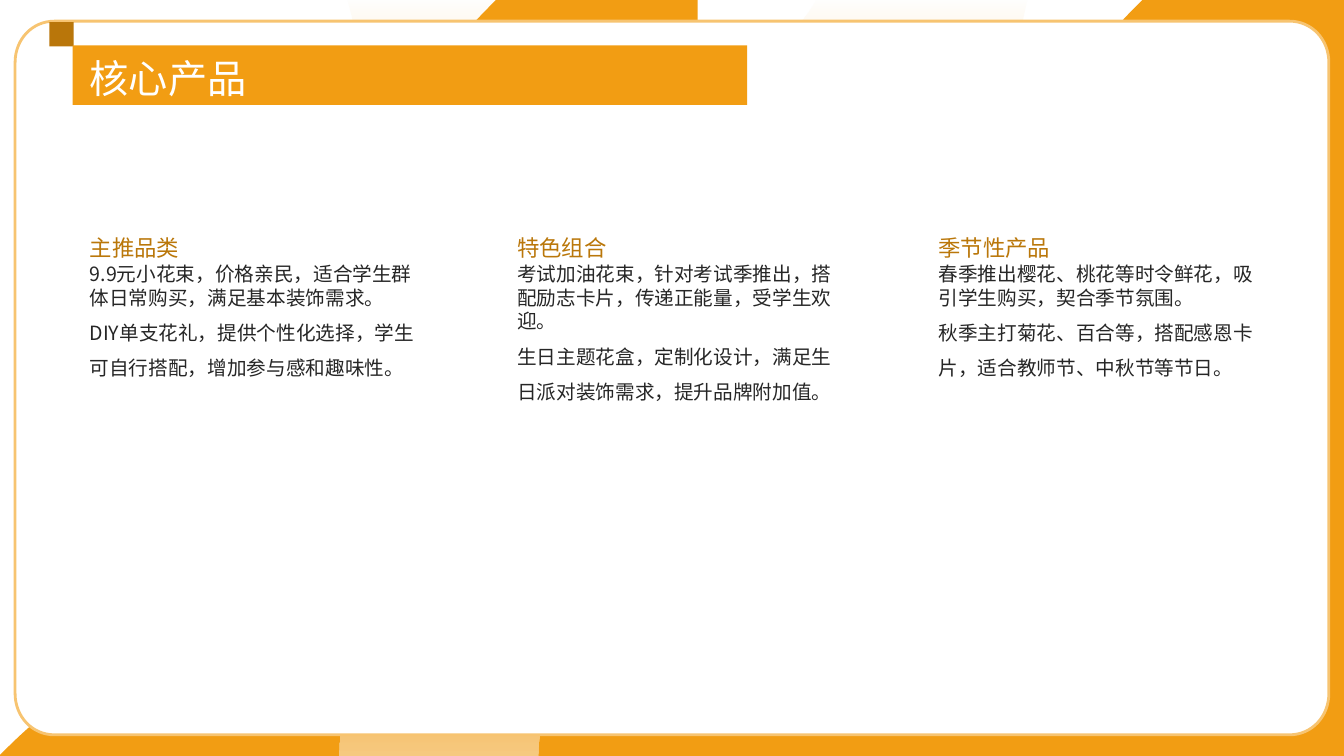
import math
import pptx
import pptx.util
import pptx.dml.color
import pptx.enum.shapes
import pptx.enum.text
import pptx.oxml.ns
from lxml import etree

Inches = pptx.util.Inches
RGB = pptx.dml.color.RGBColor
ANCHOR = pptx.enum.text.MSO_ANCHOR
qn = pptx.oxml.ns.qn

W, H = 13.33, 7.5
FONT = "Noto Sans CJK SC"
ORANGE = RGB(0xF2, 0x9D, 0x13)
BROWN = RGB(0xB9, 0x76, 0x0A)
HEADING = RGB(0xBA, 0x77, 0x0A)
INK = RGB(0x26, 0x26, 0x26)
WHITE = RGB(0xFF, 0xFF, 0xFF)
FRAME = RGB(0xF7, 0xC4, 0x71)
CREAM = RGB(0xFC, 0xEB, 0xD0)

# Outlines in inches on the slide: pairs are corners, sixes are Bezier curves
FLOOR = [(3.75, 5.9), (4.92, 5.9, 6, 6.29, 6.87, 6.94), (6.92, 6.97),
         (6.92, H), (0, H), (0, 7.49), (0.06, 7.43), (1, 6.49, 2.31, 5.9, 3.75, 5.9)]
SIDE = [(4.92, 0), (6.92, 0), (6.92, H), (4.92, H), (4.86, 7.44),
        (3.92, 6.5, 3.33, 5.19, 3.33, 3.75), (3.33, 2.31, 3.92, 1, 4.86, 0.06)]
TOP_ARC = [(3.44, -0.03), (5.53, -0.03), (5.59, 0.07),
           (5.64, 0.15, 5.7, 0.23, 5.78, 0.3),
           (6.35, 0.87, 7.28, 0.87, 7.86, 0.3),
           (7.93, 0.23, 8, 0.15, 8.05, 0.07), (8.11, -0.03), (10.19, -0.03),
           (10.13, 0.24), (9.97, 0.77, 9.68, 1.28, 9.26, 1.7),
           (7.91, 3.05, 5.73, 3.05, 4.38, 1.7),
           (3.96, 1.28, 3.67, 0.77, 3.51, 0.24)]
LOW_ARC = [(6.82, 4.05), (7.7, 4.05, 8.59, 4.38, 9.26, 5.06),
           (9.93, 5.73, 10.27, 6.62, 10.27, H), (8.29, H),
           (8.29, 7.12, 8.15, 6.75, 7.86, 6.46),
           (7.28, 5.88, 6.35, 5.88, 5.78, 6.46),
           (5.49, 6.75, 5.34, 7.12, 5.34, H), (3.37, H),
           (3.37, 6.62, 3.7, 5.73, 4.38, 5.06),
           (5.05, 4.38, 5.93, 4.05, 6.82, 4.05)]
CARD = [(0.54, 0.21), (12.79, 0.21), (13.01, 0.21, 13.18, 0.39, 13.18, 0.62),
        (13.18, 6.88), (13.18, 7.11, 13.01, 7.29, 12.79, 7.29), (0.54, 7.29),
        (0.32, 7.29, 0.15, 7.11, 0.15, 6.88), (0.15, 0.62),
        (0.15, 0.39, 0.32, 0.21, 0.54, 0.21)]

COLUMNS = [
    (0.89, "主推品类", "9.9元小花束，价格亲民，适合学生群体日常购买，满足基本装饰需求。",
     "DIY单支花礼，提供个性化选择，学生可自行搭配，增加参与感和趣味性。"),
    (5.13, "特色组合", "考试加油花束，针对考试季推出，搭配励志卡片，传递正能量，受学生欢迎。",
     "生日主题花盒，定制化设计，满足生日派对装饰需求，提升品牌附加值。"),
    (9.31, "季节性产品", "春季推出樱花、桃花等时令鲜花，吸引学生购买，契合季节氛围。",
     "秋季主打菊花、百合等，搭配感恩卡片，适合教师节、中秋节等节日。"),
]


def paint(sp, color):
    sp.shadow.inherit = False
    sp.fill.solid()
    sp.fill.fore_color.rgb = color
    sp.line.fill.background()
    return sp


def add_outline(shapes, outline, box, color, turn=0, dx=0):
    """Closed outline with true curves, in a box turned about its centre."""
    left, top, width, height = box
    cos, sin = math.cos(math.radians(turn)), math.sin(math.radians(turn))

    def local(x, y):
        u, v = x - left - width / 2, y - top - height / 2
        return (Inches(u * cos + v * sin + width / 2),
                Inches(v * cos - u * sin + height / 2))

    segments = [[local(*seg[i:i + 2]) for i in range(0, len(seg), 2)] for seg in outline]
    builder = shapes.build_freeform(*segments[0][0])
    builder.add_line_segments([seg[-1] for seg in segments[1:]], close=True)
    sp = paint(builder.convert_to_shape(), color)
    sp.left, sp.top, sp.width, sp.height = map(Inches, (left + dx, top, width, height))
    sp.rotation = turn

    # Write the path again with its curves
    path = next(sp._element.iter(qn("a:path")))
    for child in list(path):
        path.remove(child)
    path.set("w", str(Inches(width)))
    path.set("h", str(Inches(height)))
    for i, seg in enumerate(segments):
        tag = "a:moveTo" if i == 0 else "a:lnTo" if len(seg) == 1 else "a:cubicBezTo"
        node = etree.SubElement(path, qn(tag))
        for x, y in seg:
            pt = etree.SubElement(node, qn("a:pt"))
            pt.set("x", str(x))
            pt.set("y", str(y))
    etree.SubElement(path, qn("a:close"))
    return sp


def add_arc(slide, outline, box):
    """Arc that fades from cream to clear orange."""
    sp = add_outline(slide.shapes, outline, box, CREAM, turn=225)
    sp.fill.gradient()
    sp.fill.gradient_angle = 315
    start, end = sp.fill.gradient_stops
    start.color.rgb, end.color.rgb = CREAM, ORANGE
    start.position, end.position = 0, 1
    clr = list(sp._element.iter(qn("a:srgbClr")))[-1]
    etree.SubElement(clr, qn("a:alpha")).set("val", "0")


def add_panel(slide, dx):
    shapes = slide.shapes.add_group_shape().shapes
    add_outline(shapes, FLOOR, (2.66, 3.24, 1.6, 6.92), ORANGE, turn=90, dx=dx)
    add_outline(shapes, SIDE, (3.33, 0, 3.59, H), ORANGE, dx=dx)


def add_background(slide):
    add_arc(slide, TOP_ARC, (4.15, -2.3, 5.33, 5.33))
    add_panel(slide, 0)
    add_arc(slide, LOW_ARC, (3.87, 3.84, 5.89, 5.89))
    add_panel(slide, 6.41)
    # White card
    card = add_outline(slide.shapes, CARD, (0.15, 0.21, 13.03, 7.08), WHITE)
    card.line.color.rgb = FRAME
    card.line.width = pptx.util.Pt(2)


def add_rect(slide, box, color):
    kind = pptx.enum.shapes.MSO_SHAPE.RECTANGLE
    return paint(slide.shapes.add_shape(kind, *map(Inches, box)), color)


def format_frame(sp, anchor=ANCHOR.TOP):
    tf = sp.text_frame
    tf.word_wrap = True
    tf.auto_size = pptx.enum.text.MSO_AUTO_SIZE.NONE
    tf.vertical_anchor = anchor
    tf.margin_left = tf.margin_right = tf.margin_top = tf.margin_bottom = 0
    return tf


def write(p, text, size=14, color=INK, spacing=1.0):
    p.alignment = pptx.enum.text.PP_ALIGN.LEFT
    p.line_spacing = spacing
    r = p.add_run()
    r.text = text
    r.font.size = pptx.util.Pt(size)
    r.font.name = FONT
    r.font.color.rgb = color
    etree.SubElement(r.font._element, qn("a:ea")).set("typeface", FONT)


def add_title(slide, x, y, text):
    add_rect(slide, (x - 0.23, y - 0.23, 0.24, 0.24), BROWN)
    add_rect(slide, (x, y, 6.69, 0.59), ORANGE)
    title = slide.shapes.title
    title.left, title.top = Inches(x + 0.17), Inches(y + 0.04)
    title.width, title.height = Inches(11.7), Inches(0.51)
    tf = format_frame(title, ANCHOR.MIDDLE)
    write(tf.paragraphs[0], text, size=28, color=WHITE, spacing=1.1)
    # Bring the title in front of its banner
    slide.shapes._spTree.append(title._element)


def add_column(slide, x, y, heading, first, second, width=3.26):
    body = slide.shapes.add_textbox(*map(Inches, (x, y + 0.35, width, 3.75)))
    tf = format_frame(body)
    write(tf.paragraphs[0], first)
    write(tf.add_paragraph(), second, spacing=1.5)
    head = slide.shapes.add_textbox(*map(Inches, (x, y, width, 0.39)))
    tf = format_frame(head, ANCHOR.MIDDLE)
    write(tf.paragraphs[0], heading, size=16, color=HEADING, spacing=1.1)


def main():
    prs = pptx.Presentation()
    prs.slide_width, prs.slide_height = Inches(W), Inches(H)
    slide = prs.slides.add_slide(prs.slide_layouts[5])
    add_background(slide)
    for x, *texts in COLUMNS:
        add_column(slide, x, 2.25, *texts)
    add_title(slide, 0.72, 0.45, "核心产品")
    prs.save("out.pptx")


if __name__ == "__main__":
    main()
